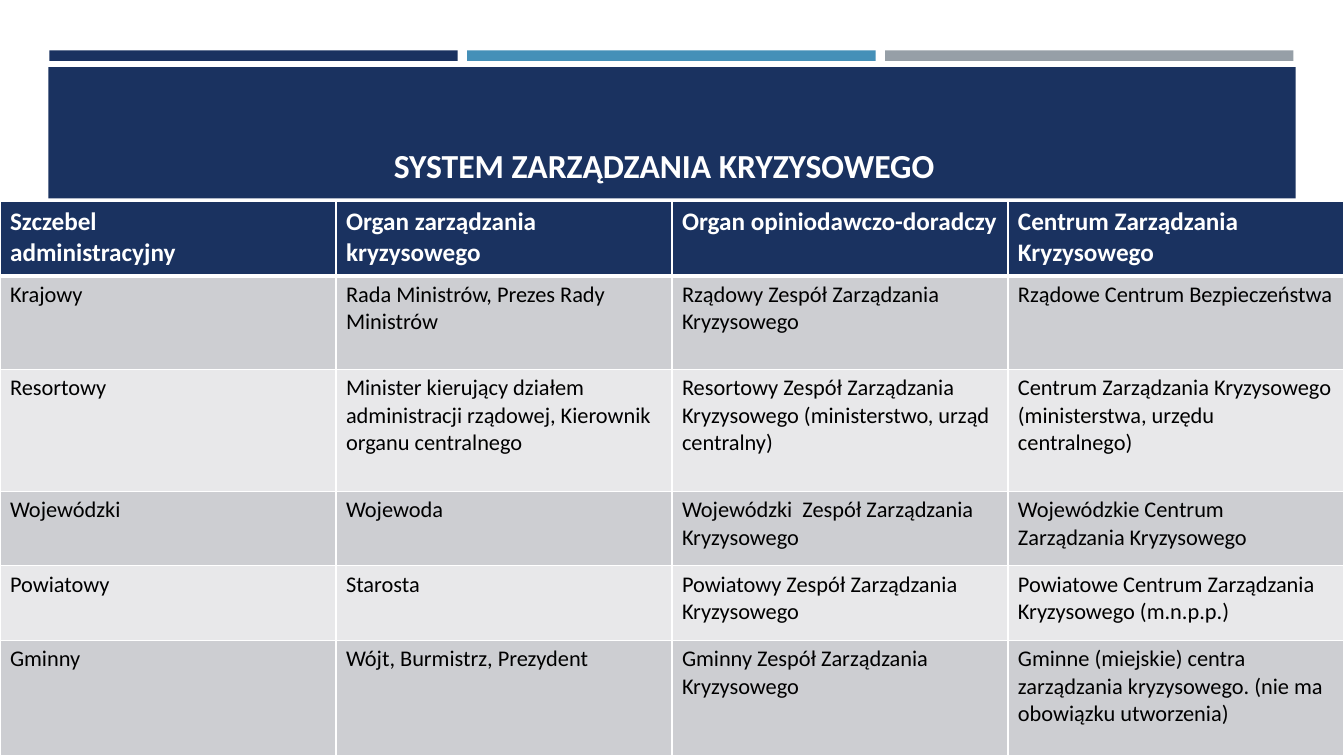
from lxml.etree import SubElement
from pptx import Presentation
from pptx.dml.color import RGBColor
from pptx.enum.shapes import MSO_SHAPE as SHAPE
from pptx.enum.text import MSO_ANCHOR as ANCHOR, PP_ALIGN as ALIGN
from pptx.oxml.ns import qn
from pptx.util import Pt

PX = 9525
NAVY, BLUE, GRAY, WHITE, BLACK = "1A3260", "4590B8", "969FA7", "FFFFFF", "000000"
BANDS = ["CDCED2", "E8E8EA"]
ROW_HEIGHTS = [71, 89, 116, 71, 71, 110]
LEVELS = [
    ["Szczebel\nadministracyjny", "Organ zarządzania\nkryzysowego",
     "Organ opiniodawczo-doradczy", "Centrum Zarządzania\nKryzysowego"],
    ["Krajowy", "Rada Ministrów, Prezes Rady Ministrów",
     "Rządowy Zespół Zarządzania Kryzysowego", "Rządowe Centrum Bezpieczeństwa"],
    ["Resortowy",
     "Minister kierujący działem administracji rządowej, Kierownik organu centralnego",
     "Resortowy Zespół Zarządzania Kryzysowego (ministerstwo, urząd centralny)",
     "Centrum Zarządzania Kryzysowego (ministerstwa, urzędu centralnego)"],
    ["Wojewódzki", "Wojewoda", "Wojewódzki  Zespół Zarządzania Kryzysowego",
     "Wojewódzkie Centrum Zarządzania Kryzysowego"],
    ["Powiatowy", "Starosta", "Powiatowy Zespół Zarządzania Kryzysowego",
     "Powiatowe Centrum Zarządzania Kryzysowego (m.n.p.p.)"],
    ["Gminny", "Wójt, Burmistrz, Prezydent", "Gminny Zespół Zarządzania Kryzysowego",
     "Gminne (miejskie) centra zarządzania kryzysowego. (nie ma obowiązku utworzenia)"],
]


def px(*lengths):
    return [n * PX for n in lengths]


def paint(fill, color):
    fill.solid()
    fill.fore_color.rgb = RGBColor.from_string(color)


def add_text(p, text, size, color, bold=False):
    for i, line in enumerate(text.split("\n")):
        if i:
            p.add_line_break()
        r = p.add_run()
        r.text = line
        r.font.name, r.font.size, r.font.bold = "Calibri", Pt(size), bold
        r.font.color.rgb = RGBColor.from_string(color)


def add_rect(slide, x, y, w, h, color):
    sp = slide.shapes.add_shape(SHAPE.RECTANGLE, *px(x, y, w, h))
    sp.shadow.inherit = False
    paint(sp.fill, color)
    sp.line.fill.background()


def add_stripes(slide, x, y, w, h, gap):
    colors = [NAVY, BLUE, GRAY]
    stripe = (w - gap * (len(colors) - 1)) // len(colors)
    for i, color in enumerate(colors):
        add_rect(slide, x + i * (stripe + gap), y, stripe, h, color)


def add_title(slide, x, y, w, h):
    add_rect(slide, x, y, w, h, NAVY)
    tf = slide.shapes.add_textbox(*px(x + 1, y + 10, w - 17, h - 18)).text_frame
    tf.word_wrap = True
    tf.vertical_anchor = ANCHOR.BOTTOM
    p = tf.paragraphs[0]
    p.alignment = ALIGN.CENTER
    add_text(p, "SYSTEM ZARZĄDZANIA KRYZYSOWEGO", 24, WHITE, True)


def set_borders(cell, top, bottom):
    """White lines round a cell; top and bottom widths in points."""
    tc_pr = cell._tc.get_or_add_tcPr()
    for side, width in (("L", 1), ("R", 1), ("T", top), ("B", bottom)):
        ln = SubElement(tc_pr, qn(f"a:ln{side}"), w=str(Pt(width)))
        SubElement(SubElement(ln, qn("a:solidFill")), qn("a:srgbClr"), val=WHITE)


def add_levels_table(slide, x, y, w):
    cols = len(LEVELS[0])
    frame = slide.shapes.add_table(len(LEVELS), cols, *px(x, y, w, sum(ROW_HEIGHTS)))
    table = frame.table
    for col in table.columns:
        col.width = w // cols * PX
    for i, (texts, height) in enumerate(zip(LEVELS, ROW_HEIGHTS)):
        table.rows[i].height = height * PX
        header = i == 0
        for j, text in enumerate(texts):
            cell = table.cell(i, j)
            set_borders(cell, 3 if i == 1 else 1, 3 if header else 1)
            paint(cell.fill, NAVY if header else BANDS[(i - 1) % 2])
            add_text(cell.text_frame.paragraphs[0], text,
                     18 if header else 16, WHITE if header else BLACK, header)


def main():
    prs = Presentation()
    prs.slide_width, prs.slide_height = px(1280, 720)
    slide = prs.slides.add_slide(prs.slide_layouts[6])
    add_stripes(slide, 47, 48, 1186, 10, 9)
    add_title(slide, 46, 64, 1188, 125)
    add_levels_table(slide, 0, 192, 1280)
    prs.save("out.pptx")


if __name__ == "__main__":
    main()
